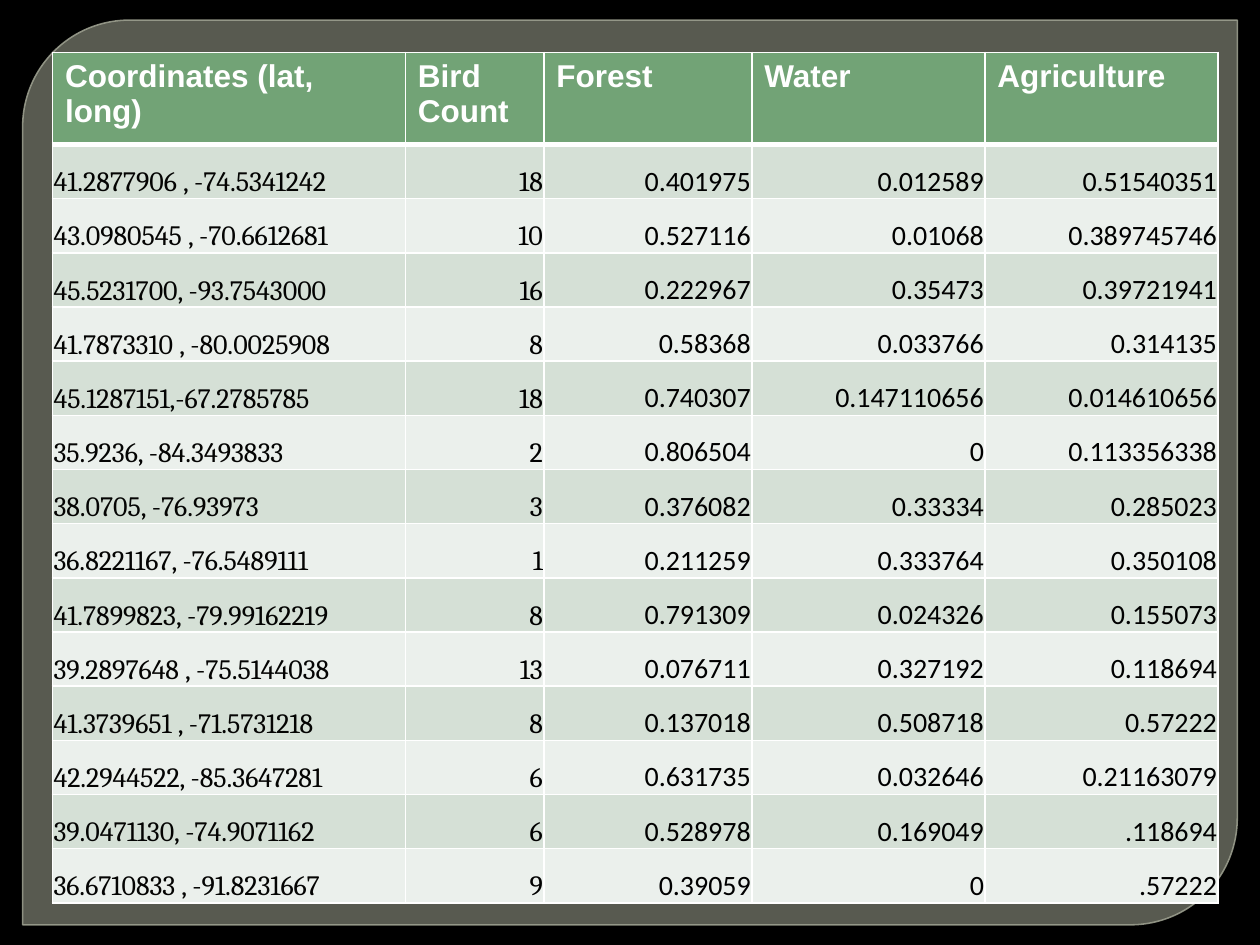
from dataclasses import dataclass

import pptx
import pptx.dml.color
import pptx.enum.shapes
import pptx.enum.text
import pptx.oxml
import pptx.oxml.ns
import pptx.util

EMU_PER_PX = 762
ANCHOR = pptx.enum.text.MSO_ANCHOR
ALIGN = pptx.enum.text.PP_ALIGN


@dataclass(frozen=True)
class Theme:
    background: str = "000000"
    panel: str = "888B7B"
    panel_opacity: int = 65
    panel_line: str = "9DA090"
    panel_line_opacity: int = 88
    header: str = "72A376"
    bands: tuple[str, str] = ("D5E0D6", "EBF0EC")
    border: str = "FFFFFF"
    header_text: str = "FFFFFF"
    coordinate_text: str = "040403"
    number_text: str = "000000"
    header_size: int = 18
    body_size: int = 16


@dataclass(frozen=True)
class Column:
    heading: str
    width: int
    font: str
    color: str
    align: ALIGN


@dataclass(frozen=True)
class Site:
    coordinates: str
    bird_count: str
    forest: str
    water: str
    agriculture: str

    def values(self) -> tuple[str, ...]:
        return (self.coordinates, self.bird_count, self.forest, self.water, self.agriculture)


THEME = Theme()
TABLE_OFFSET = 500
HEADER_HEIGHT = 876
ROW_HEIGHT = 516
CELL_MARGIN = 10

COLUMNS = [
    Column("Coordinates (lat, long)", 3360, "Cambria", THEME.coordinate_text, ALIGN.LEFT),
    Column("Bird Count", 1320, "Cambria", THEME.number_text, ALIGN.RIGHT),
    Column("Forest", 1980, "Calibri", THEME.number_text, ALIGN.RIGHT),
    Column("Water", 2220, "Calibri", THEME.number_text, ALIGN.RIGHT),
    Column("Agriculture", 2220, "Calibri", THEME.number_text, ALIGN.RIGHT),
]

SITES = [
    Site("41.2877906 , -74.5341242", "18", "0.401975", "0.012589", "0.51540351"),
    Site("43.0980545 , -70.6612681", "10", "0.527116", "0.01068", "0.389745746"),
    Site("45.5231700, -93.7543000", "16", "0.222967", "0.35473", "0.39721941"),
    Site("41.7873310 , -80.0025908", "8", "0.58368", "0.033766", "0.314135"),
    Site("45.1287151,-67.2785785", "18", "0.740307", "0.147110656", "0.014610656"),
    Site("35.9236, -84.3493833", "2", "0.806504", "0", "0.113356338"),
    Site("38.0705, -76.93973", "3", "0.376082", "0.33334", "0.285023"),
    Site("36.8221167, -76.5489111", "1", "0.211259", "0.333764", "0.350108"),
    Site("41.7899823, -79.99162219", "8", "0.791309", "0.024326", "0.155073"),
    Site("39.2897648 , -75.5144038", "13", "0.076711", "0.327192", "0.118694"),
    Site("41.3739651 , -71.5731218", "8", "0.137018", "0.508718", "0.57222"),
    Site("42.2944522, -85.3647281", "6", "0.631735", "0.032646", "0.21163079"),
    Site("39.0471130, -74.9071162", "6", "0.528978", "0.169049", ".118694"),
    Site("36.6710833 , -91.8231667", "9", "0.39059", "0", ".57222"),
]


def px(length: int) -> pptx.util.Emu:
    return pptx.util.Emu(length * EMU_PER_PX)


def rgb(color: str) -> pptx.dml.color.RGBColor:
    return pptx.dml.color.RGBColor.from_string(color)


def set_opacity(fill_parent, percent: int) -> None:
    color = fill_parent.find(pptx.oxml.ns.qn("a:solidFill"))[0]
    alpha = pptx.oxml.parse_xml(f'<a:alpha {pptx.oxml.ns.nsdecls("a")} val="{percent * 1000}"/>')
    color.append(alpha)


def write_text(text_frame, text: str, *, font: str, size: int, color: str,
               bold: bool = False, align: ALIGN = ALIGN.LEFT) -> None:
    paragraph = text_frame.paragraphs[0]
    paragraph.alignment = align
    run = paragraph.add_run()
    run.text = text
    run.font.name = font
    run.font.size = pptx.util.Pt(size)
    run.font.bold = bold
    run.font.color.rgb = rgb(color)


def style_cell(cell, fill: str, top: int = 1, bottom: int = 1) -> None:
    cell.fill.solid()
    cell.fill.fore_color.rgb = rgb(fill)
    properties = cell._tc.get_or_add_tcPr()
    for index, (side, width) in enumerate([("L", 1), ("R", 1), ("T", top), ("B", bottom)]):
        properties.insert(index, pptx.oxml.parse_xml(
            f'<a:ln{side} {pptx.oxml.ns.nsdecls("a")} w="{pptx.util.Pt(width)}">'
            f'<a:solidFill><a:srgbClr val="{THEME.border}"/></a:solidFill></a:ln{side}>'))


def draw_panel(slide) -> None:
    panel = slide.shapes.add_shape(
        pptx.enum.shapes.MSO_SHAPE.ROUND_2_DIAG_RECTANGLE,
        px(216), px(192), px(11568), px(8616))
    panel.shadow.inherit = False
    panel.adjustments[0] = 0.118
    panel.adjustments[1] = 0
    panel.fill.solid()
    panel.fill.fore_color.rgb = rgb(THEME.panel)
    panel.line.color.rgb = rgb(THEME.panel_line)
    panel.line.width = pptx.util.Pt(0.87)
    set_opacity(panel._element.spPr, THEME.panel_opacity)
    set_opacity(panel.line._ln, THEME.panel_line_opacity)


def draw_table(slide) -> None:
    width = sum(column.width for column in COLUMNS)
    height = HEADER_HEIGHT + ROW_HEIGHT * len(SITES)
    table = slide.shapes.add_table(
        len(SITES) + 1, len(COLUMNS),
        px(TABLE_OFFSET), px(TABLE_OFFSET), px(width), px(height)).table
    table.rows[0].height = px(HEADER_HEIGHT)
    for index, column in enumerate(COLUMNS):
        table.columns[index].width = px(column.width)
        cell = table.cell(0, index)
        style_cell(cell, THEME.header, bottom=3)
        write_text(cell.text_frame, column.heading, font="Arial", size=THEME.header_size,
                   color=THEME.header_text, bold=True)
    for row, site in enumerate(SITES, start=1):
        table.rows[row].height = px(ROW_HEIGHT)
        for index, (column, value) in enumerate(zip(COLUMNS, site.values())):
            cell = table.cell(row, index)
            style_cell(cell, THEME.bands[(row - 1) % 2], top=3 if row == 1 else 1)
            cell.vertical_anchor = ANCHOR.BOTTOM
            cell.margin_left = cell.margin_right = cell.margin_top = px(CELL_MARGIN)
            cell.margin_bottom = 0
            write_text(cell.text_frame, value, font=column.font, size=THEME.body_size,
                       color=column.color, align=column.align)


def main() -> None:
    presentation = pptx.Presentation()
    presentation.slide_width = px(12000)
    presentation.slide_height = px(9000)
    slide = presentation.slides.add_slide(presentation.slide_layouts[6])
    slide.background.fill.solid()
    slide.background.fill.fore_color.rgb = rgb(THEME.background)
    draw_panel(slide)
    draw_table(slide)
    presentation.save("out.pptx")


if __name__ == "__main__":
    main()
